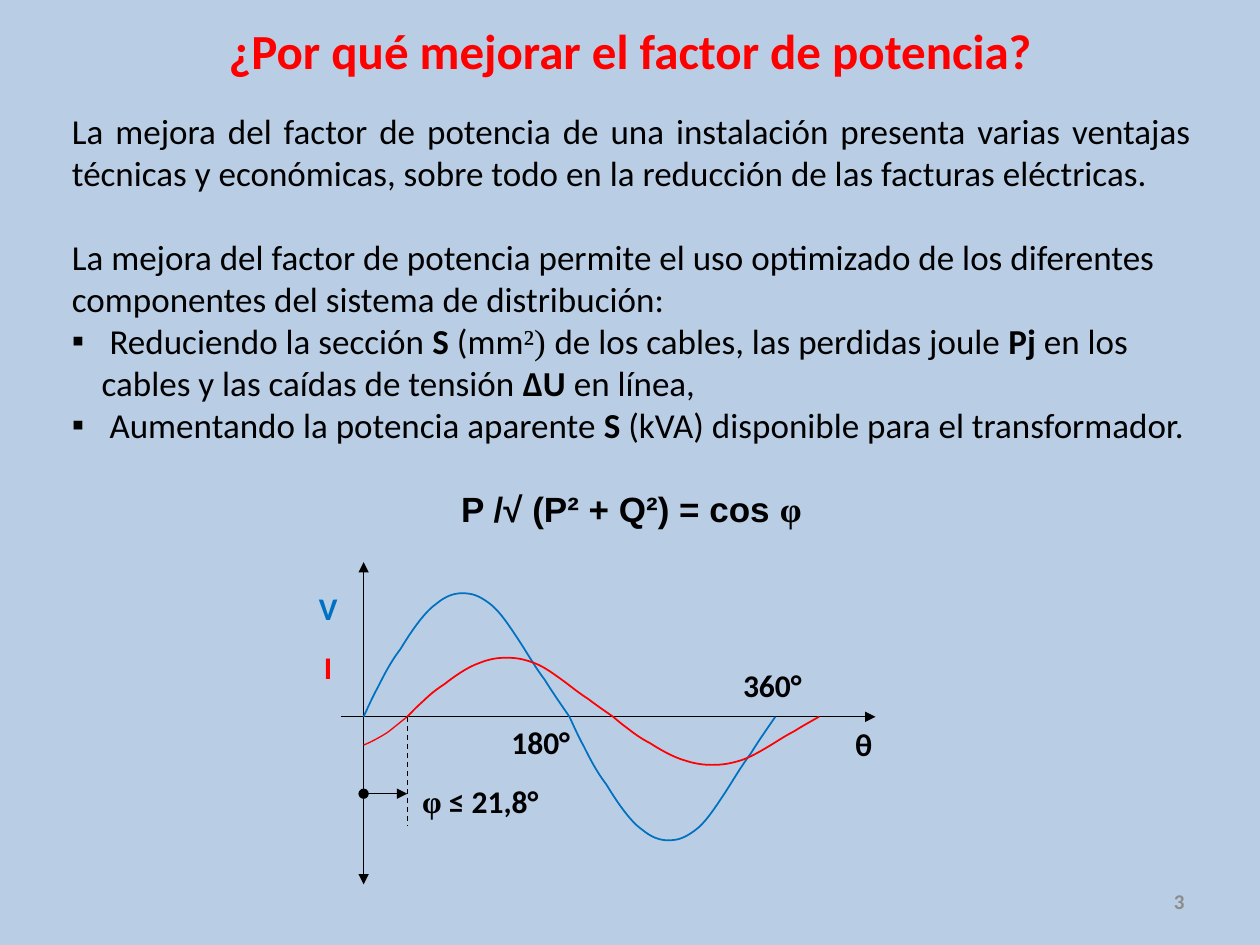
"""Build a slide on power factor improvement with a phase-shift diagram."""
from lxml.etree import SubElement
from pptx import Presentation
from pptx.dml.color import RGBColor
from pptx.enum.dml import MSO_LINE_DASH_STYLE as Dash
from pptx.enum.shapes import MSO_CONNECTOR_TYPE as Connector
from pptx.enum.text import MSO_ANCHOR as Anchor, MSO_AUTO_SIZE as AutoSize, PP_ALIGN as Align
from pptx.oxml.ns import qn
from pptx.util import Cm, Pt

COLORS = {"background": "B9CDE5", "text": "000000", "red": "FF0000",
          "blue": "0070C0", "gray": "8C8C8C"}
SERIF = "Times New Roman"
ORIGIN_X, ORIGIN_Y = 7.33, 14.45
HALF_PERIOD, PHASE_SHIFT = 4.15, 0.88
HALF_WAVE = [(0, 0),
             (0.02, 0.07), (0.04, 0.15), (0.07, 0.24),
             (0.1, 0.34), (0.13, 0.44), (0.18, 0.55),
             (0.22, 0.66), (0.29, 0.84), (0.35, 0.91),
             (0.4, 0.98), (0.44, 1), (0.48, 1),
             (0.53, 1), (0.56, 0.98), (0.61, 0.92),
             (0.66, 0.86), (0.71, 0.73), (0.75, 0.63),
             (0.79, 0.53), (0.83, 0.41), (0.88, 0.3),
             (0.92, 0.19), (0.98, 0.05), (1, 0)]
BODY = [
    ({"alignment": Align.JUSTIFY},
     [("La mejora del factor de potencia de una instalación presenta varias ventajas "
       "técnicas y económicas, sobre todo en la reducción de las facturas eléctricas.", {})]),
    ({"space_before": Pt(24)},
     [("La mejora del factor de potencia permite el uso optimizado de los diferentes "
       "componentes del sistema de distribución:", {})]),
    ({"bullet": "▪"},
     [(" Reduciendo la sección ", {}), ("S ", {"bold": True}), ("(mm", {}),
      ("²) ", {"name": SERIF}), ("de los cables, las perdidas joule ", {}),
      ("Pj", {"bold": True}), (" en los cables y las caídas de tensión ", {}),
      ("∆U ", {"bold": True}), ("en línea,", {})]),
    ({"bullet": "▪"},
     [(" Aumentando la potencia aparente ", {}), ("S ", {"bold": True}),
      ("(kVA) disponible para el transformador.", {})]),
    ({"alignment": Align.CENTER, "space_before": Pt(24)},
     [("P /√ (P² + Q²) = cos ", {"name": "Arial", "bold": True}),
      ("φ", {"name": SERIF, "bold": True})]),
]


def rgb(color):
    """Return the named colour as an RGBColor."""
    return RGBColor.from_string(COLORS[color])


def set_attributes(target, values):
    """Set every attribute named in values on the target."""
    for name, value in values.items():
        setattr(target, name, value)


def add_bullet(paragraph, symbol):
    """Give the paragraph a hanging bullet."""
    properties = paragraph._p.get_or_add_pPr()
    properties.set("marL", str(Cm(0.6)))
    properties.set("indent", str(-Cm(0.6)))
    SubElement(properties, qn("a:buFont")).set("typeface", "Arial")
    SubElement(properties, qn("a:buChar")).set("char", symbol)


def add_text(slide, box, paragraphs, size, color="text", bold=False, **frame_format):
    """Add a wrapped text box made of formatted paragraphs and runs."""
    frame = slide.shapes.add_textbox(*map(Cm, box)).text_frame
    set_attributes(frame, {"word_wrap": True, **frame_format})
    for index, (layout, runs) in enumerate(paragraphs):
        paragraph = frame.add_paragraph() if index else frame.paragraphs[0]
        set_attributes(paragraph, {key: value for key, value in layout.items() if key != "bullet"})
        if "bullet" in layout:
            add_bullet(paragraph, layout["bullet"])
        for text, font_format in runs:
            run = paragraph.add_run()
            run.text = text
            set_attributes(run.font, {"name": "Calibri", "size": Pt(size), "bold": bold,
                                      **font_format})
            run.font.color.rgb = rgb(color)


def add_label(slide, box, runs, color="text", alignment=Align.LEFT):
    """Add a bold diagram label."""
    layout = {"alignment": alignment, "space_after": Pt(10)}
    add_text(slide, box, [(layout, runs)], 18, color, True)


def add_line(slide, start, end, head=None, tail=None, dash=None):
    """Add a thin black line with optional line ends."""
    line = slide.shapes.add_connector(Connector.STRAIGHT, *map(Cm, start + end))
    line.line.width = Pt(0.75)
    line.line.color.rgb = rgb("text")
    if dash:
        line.line.dash_style = dash
    outline = line.line._get_or_add_ln()
    for tag, kind in (("a:headEnd", head), ("a:tailEnd", tail)):
        if kind:
            SubElement(outline, qn(tag)).set("type", kind)
    SubElement(line._element.spPr, qn("a:effectLst"))


def bend_segments(curve):
    """Turn every three straight segments of a freeform into one cubic Bézier."""
    outline = next(curve._element.iter(qn("a:path")))
    segments = outline.findall(qn("a:lnTo"))
    for start in range(0, len(segments), 3):
        bezier = SubElement(outline, qn("a:cubicBezTo"))
        for segment in segments[start:start + 3]:
            bezier.append(segment[0])
            outline.remove(segment)


def add_curve(slide, points, color, width=1):
    """Add an unfilled Bézier curve through points given in centimetres."""
    start, *rest = [(Cm(x), Cm(y)) for x, y in points]
    builder = slide.shapes.build_freeform(*start)
    builder.add_line_segments(rest, close=False)
    curve = builder.convert_to_shape()
    bend_segments(curve)
    curve.shadow.inherit = False
    curve.fill.background()
    curve.line.color.rgb = rgb(color)
    curve.line.width = Pt(width)


def add_half_wave(slide, start_x, amplitude, color):
    """Add half a period of a wave; a negative amplitude goes below the axis."""
    points = [(start_x + HALF_PERIOD * x, ORIGIN_Y - amplitude * y) for x, y in HALF_WAVE]
    add_curve(slide, points, color)


def add_diagram(slide):
    """Draw axes, voltage and current waves, phase angle and labels."""
    shifted_x = ORIGIN_X + PHASE_SHIFT
    add_line(slide, (ORIGIN_X, 11.33), (ORIGIN_X, 17.83), "triangle", "triangle")
    add_line(slide, (6.87, ORIGIN_Y), (17.65, ORIGIN_Y), tail="triangle")
    for start_x, amplitudes, color in ((ORIGIN_X, (2.49, -2.49), "blue"),
                                       (shifted_x, (1.19, -0.97), "red")):
        for index, amplitude in enumerate(amplitudes):
            add_half_wave(slide, start_x + index * HALF_PERIOD, amplitude, color)
    add_curve(slide, [(shifted_x, ORIGIN_Y), (8.08, 14.55), (7.95, 14.66), (7.82, 14.76),
                      (7.67, 14.86), (7.42, 14.99), (ORIGIN_X, 15.02)], "red", 0.75)
    add_line(slide, (shifted_x, ORIGIN_Y), (shifted_x, 16.66), dash=Dash.DASH)
    add_line(slide, (ORIGIN_X, 16), (shifted_x, 16), "oval", "triangle")
    add_label(slide, (5.89, 11.74, 1.45, 1.52), [("V", {})], "blue", Align.CENTER)
    add_label(slide, (5.89, 12.93, 1.45, 1.52), [("I", {})], "red", Align.CENTER)
    add_label(slide, (16.99, 14.49, 1.45, 1.52), [("θ", {})])
    add_label(slide, (8.26, 15.65, 3.2, 1.52), [("φ", {"name": SERIF}), (" ≤ 21,8°", {})])
    add_label(slide, (10.06, 14.45, 1.83, 1.52), [("180°", {})])
    add_label(slide, (14.73, 13.31, 1.83, 1.19), [("360°", {})])


def main():
    """Build and save the slide."""
    presentation = Presentation()
    set_attributes(presentation, {"slide_width": Cm(25.4), "slide_height": Cm(19.05)})
    slide = presentation.slides.add_slide(presentation.slide_layouts[6])
    slide.background.fill.solid()
    slide.background.fill.fore_color.rgb = rgb("background")
    title = [({"alignment": Align.CENTER}, [("¿Por qué mejorar el factor de potencia?", {})])]
    add_text(slide, (0, 0, 25.4, 2), title, 28, "red", True, vertical_anchor=Anchor.MIDDLE)
    number = [({"alignment": Align.RIGHT}, [("3", {})])]
    add_text(slide, (18.2, 17.66, 5.93, 1.01), number, 12, "gray", True,
             vertical_anchor=Anchor.MIDDLE)
    add_text(slide, (1.2, 2.08, 23.06, 9.65), BODY, 20, auto_size=AutoSize.SHAPE_TO_FIT_TEXT)
    add_diagram(slide)
    presentation.save("out.pptx")


if __name__ == "__main__":
    main()
